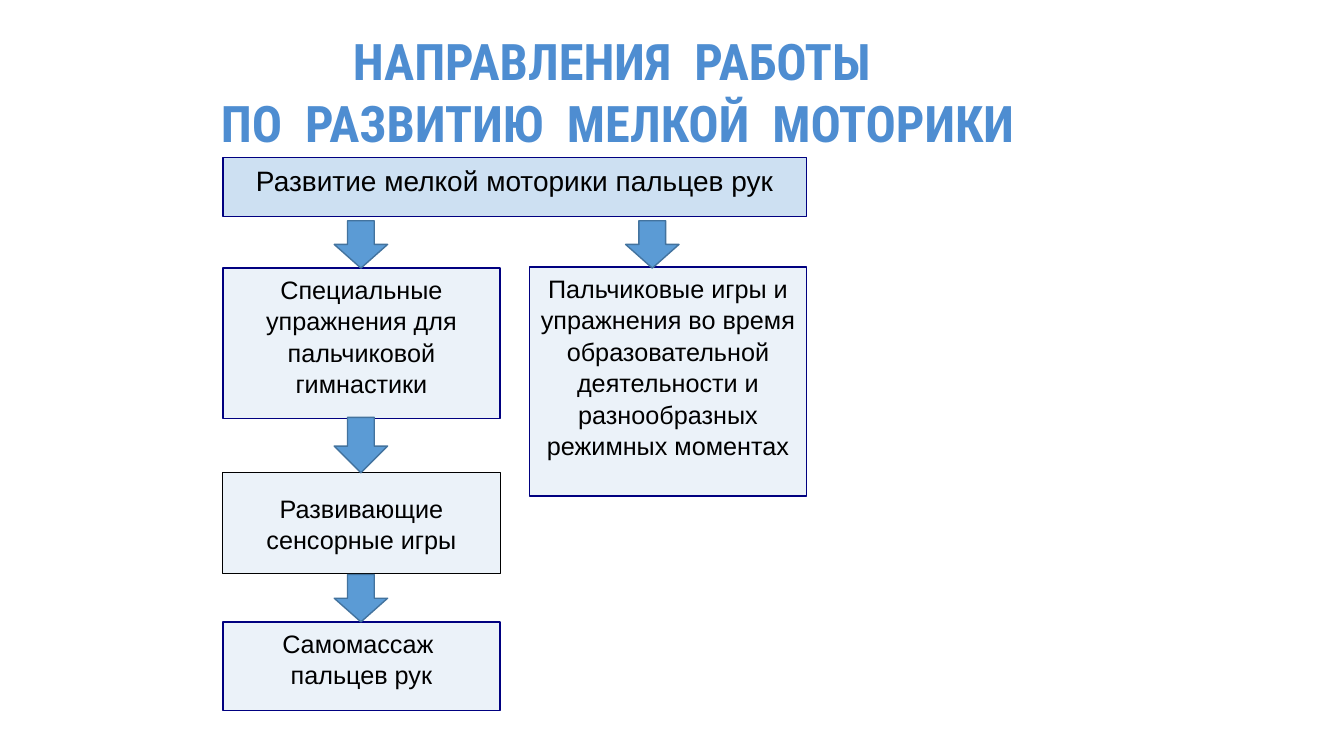
from lxml import etree
from pptx import Presentation
from pptx.dml.color import RGBColor
from pptx.enum import shapes, text
from pptx.oxml import ns
from pptx.util import Inches, Pt

LEFT, RIGHT, COLUMN = 2.21, 5.25, 2.75
ARROW_WIDTH = 0.53
BLUE, PALE, NAVY, BLACK = "5B9BD5", "BDD7EE", "000080", "000000"


def colour(value):
    """Turn a hex string into a colour."""
    return RGBColor.from_string(value)


def write(para, words, size, font="Arial", ink=BLACK, bold=False, spacing=1.04):
    """Add centred text to a paragraph and return its run."""
    para.alignment = text.PP_ALIGN.CENTER
    para.line_spacing = spacing
    span = para.add_run()
    span.text = words
    span.font.size, span.font.name, span.font.bold = Pt(size), font, bold
    span.font.color.rgb = colour(ink)
    return span


def add_block(page, kind, area, fill, line, width=1, opacity=100):
    """Draw a filled and outlined shape in the given area."""
    box = page.shapes.add_shape(kind, *map(Inches, area))
    box.shadow.inherit = False
    box.fill.solid()
    box.fill.fore_color.rgb = colour(fill)
    if opacity < 100:
        tint = box.fill._xPr.find(".//" + ns.qn("a:srgbClr"))
        etree.SubElement(tint, ns.qn("a:alpha")).set("val", str(opacity * 1000))
    box.line.color.rgb = colour(line)
    box.line.width = Pt(width)
    return box


def add_card(page, area, lines, size=18, fill=PALE, line=NAVY, width=1,
             anchor=text.MSO_ANCHOR.TOP):
    """Draw a translucent card with one paragraph per line."""
    box = add_block(page, shapes.MSO_SHAPE.RECTANGLE, area, fill, line, width, 30)
    frame = box.text_frame
    frame.word_wrap = True
    frame.vertical_anchor = anchor
    for index, words in enumerate(lines):
        para = frame.add_paragraph() if index else frame.paragraphs[0]
        write(para, words, size)


def add_arrow(page, centre, top, height):
    """Draw a down arrow centred on a column."""
    area = (centre - ARROW_WIDTH / 2, top, ARROW_WIDTH, height)
    add_block(page, shapes.MSO_SHAPE.DOWN_ARROW, area, BLUE, "43739E")


def add_title(page, area, lines):
    """Place the heading with widened gaps between its words."""
    title = page.shapes.title
    title.left, title.top, title.width, title.height = map(Inches, area)
    frame = title.text_frame
    frame.word_wrap = True
    frame.auto_size = text.MSO_AUTO_SIZE.NONE
    frame.vertical_anchor = text.MSO_ANCHOR.TOP
    for index, words in enumerate(lines):
        para = frame.add_paragraph() if index else frame.paragraphs[0]
        for word in words.split(" "):
            if para.runs:
                gap = write(para, " ", 36, "Roboto Condensed", "4E8DD1", True, 1.03)
                gap._r.get_or_add_rPr().set("spc", "800")
            if word:
                write(para, word, 36, "Roboto Condensed", "4E8DD1", True, 1.03)


def add_scheme(page):
    """Lay out the cards and the arrows between them."""
    add_card(page, (LEFT, 2.66, COLUMN, 1.49),
             ["Специальные упражнения для пальчиковой гимнастики"])
    add_card(page, (LEFT, 6.17, COLUMN, 0.88), ["Самомассаж ", "пальцев рук"])
    add_card(page, (RIGHT, 2.65, COLUMN, 2.27),
             ["Пальчиковые игры и упражнения во время образовательной "
              "деятельности и разнообразных режимных моментах"])
    add_card(page, (LEFT, 1.56, RIGHT + COLUMN - LEFT, 0.59),
             ["Развитие мелкой моторики пальцев рук"], size=20, fill=BLUE)
    add_card(page, (LEFT, 4.69, COLUMN, 1), ["Развивающие сенсорные игры"],
             line=BLACK, width=0.75, anchor=text.MSO_ANCHOR.MIDDLE)
    for centre, top, height in ((3.58, 2.19, 0.47), (6.47, 2.19, 0.47),
                                (3.58, 4.14, 0.55), (3.58, 5.7, 0.47)):
        add_arrow(page, centre, top, height)


def main():
    """Build and save the deck."""
    deck = Presentation()
    deck.slide_width, deck.slide_height = Inches(13.33), Inches(7.5)
    page = deck.slides.add_slide(deck.slide_layouts[5])
    add_title(page, (2.06, 0.23, 8.13, 1.31),
              ["НАПРАВЛЕНИЯ РАБОТЫ ", "ПО РАЗВИТИЮ МЕЛКОЙ МОТОРИКИ"])
    add_scheme(page)
    deck.save("out.pptx")


if __name__ == "__main__":
    main()
